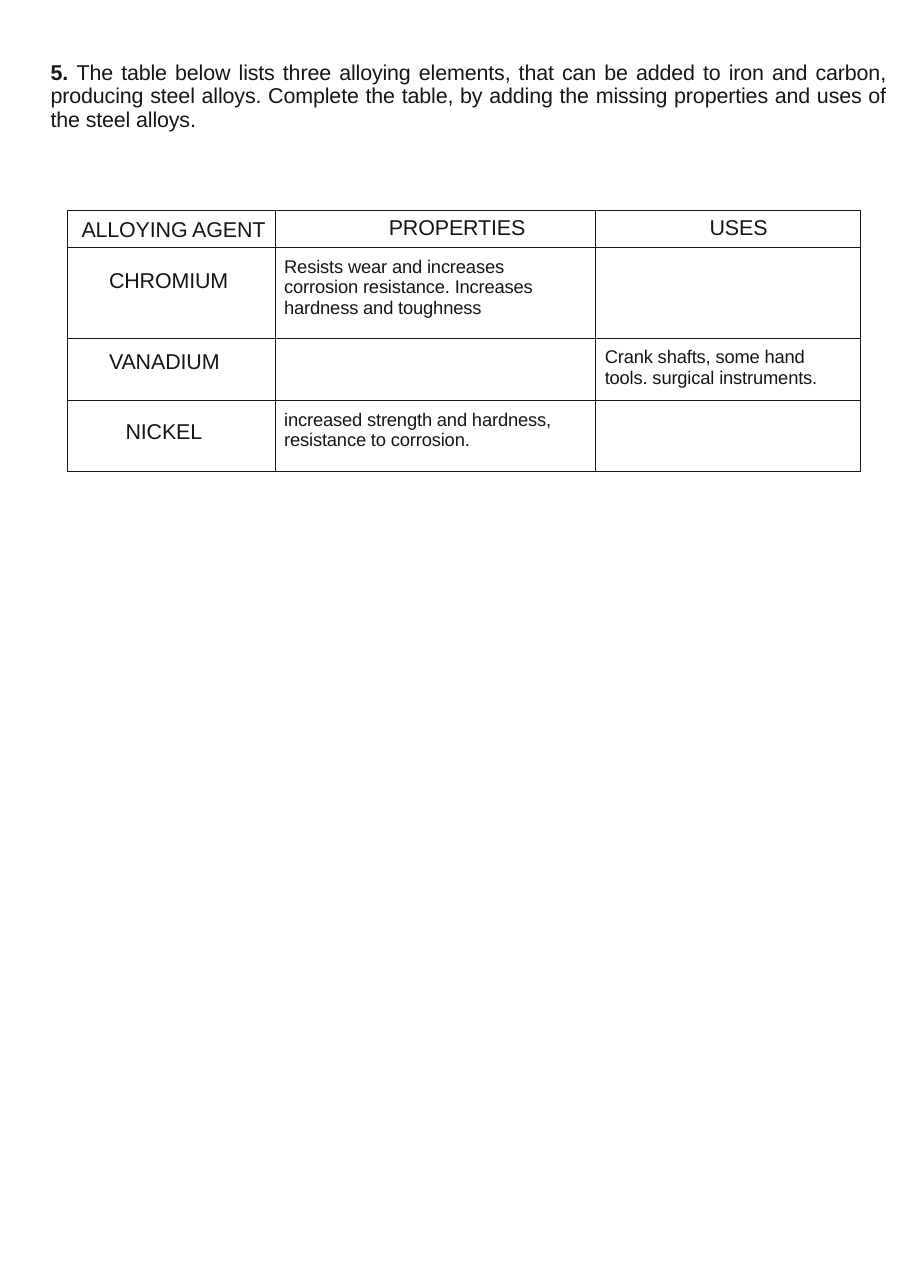
from pptx import Presentation
from pptx import util as u
from pptx.dml import color
from pptx.enum import text
from pptx.oxml import parse_xml
from pptx.oxml.ns import nsdecls

theme = dict(font="Arial", ink="151616", head=14, body=12, rule=0.75, track=-10)
ink = color.RGBColor.from_string(theme["ink"])
left, mid, full = text.PP_ALIGN.LEFT, text.PP_ALIGN.CENTER, text.PP_ALIGN.JUSTIFY


def write(para, words, size=theme["head"], bold=False, align=left, lead=None):
    para.alignment = align
    if lead:
        para.line_spacing = u.Pt(lead)
    run = para.add_run()
    run.text = words
    font = run.font
    font.name, font.size, font.bold = theme["font"], u.Pt(size), bold
    font.color.rgb = ink
    font._element.set("spc", str(theme["track"]))


deck = Presentation()
deck.slide_width, deck.slide_height = u.Inches(8.26), u.Inches(11.69)
slide = deck.slides.add_slide(deck.slide_layouts[6])

cols = [1.89, 2.91, 2.4]
rows = [0.34, 0.82, 0.57, 0.64]
grid = slide.shapes.add_table(
    len(rows), len(cols), u.Inches(0.61), u.Inches(1.91),
    u.Inches(sum(cols)), u.Inches(sum(rows))).table
grid.first_row = grid.horz_banding = False
for col, width in zip(grid.columns, cols):
    col.width = u.Inches(width)
for row, height in zip(grid.rows, rows):
    row.height = u.Inches(height)

for cell in grid.iter_cells():
    cell.margin_left = cell.margin_right = 0
    cell.margin_top = cell.margin_bottom = 0
    cell.vertical_anchor = text.MSO_ANCHOR.TOP
    cell.text_frame.paragraphs[0].font.size = u.Pt(theme["body"])
    for side in ("lnL", "lnR", "lnT", "lnB"):
        cell._tc.get_or_add_tcPr().append(parse_xml(
            f'<a:{side} {nsdecls("a")} w="{u.Pt(theme["rule"])}"><a:solidFill>'
            f'<a:srgbClr val="{theme["ink"]}"/></a:solidFill></a:{side}>'))
    cell.fill.background()

note = dict(size=theme["body"], lead=13.4)
items = [
    (0, 0, "ALLOYING AGENT", 0.13, 0.07, 0, {}),
    (0, 1, "PROPERTIES", 1.03, 0.05, 0, {}),
    (0, 2, "USES", 0.19, 0.05, 0, dict(align=mid)),
    (1, 0, "CHROMIUM", 0.38, 0.19, 0, {}),
    (2, 0, "VANADIUM", 0.38, 0.11, 0, {}),
    (3, 0, "NICKEL", 0.53, 0.17, 0, {}),
    (1, 1, "Resists wear and increases corrosion resistance. "
           "Increases hardness and toughness", 0.08, 0.08, 0.25, note),
    (2, 2, "Crank shafts, some hand tools. surgical instruments.",
     0.08, 0.08, 0.25, note),
    (3, 1, "increased strength and hardness, resistance to corrosion.",
     0.08, 0.08, 0.25, note),
]
for row, col, words, inset, top, right, form in items:
    cell = grid.cell(row, col)
    cell.margin_left, cell.margin_top = u.Inches(inset), u.Inches(top)
    cell.margin_right = u.Inches(right)
    write(cell.text_frame.paragraphs[0], words, **form)

box = slide.shapes.add_textbox(
    u.Inches(0.45), u.Inches(0.52), u.Inches(7.59), u.Inches(0.7))
frame = box.text_frame
frame.word_wrap = True
frame.margin_left, frame.margin_top = u.Inches(0.01), u.Inches(0.03)
frame.margin_right = frame.margin_bottom = 0
task = frame.paragraphs[0]
write(task, "5. ", bold=True, align=full, lead=15.6)
write(task, "The table below lists three alloying elements, that can be added to "
            "iron and carbon, producing steel alloys. Complete the table, by adding "
            "the missing properties and uses of the steel alloys.",
      align=full, lead=15.6)

deck.save("out.pptx")
